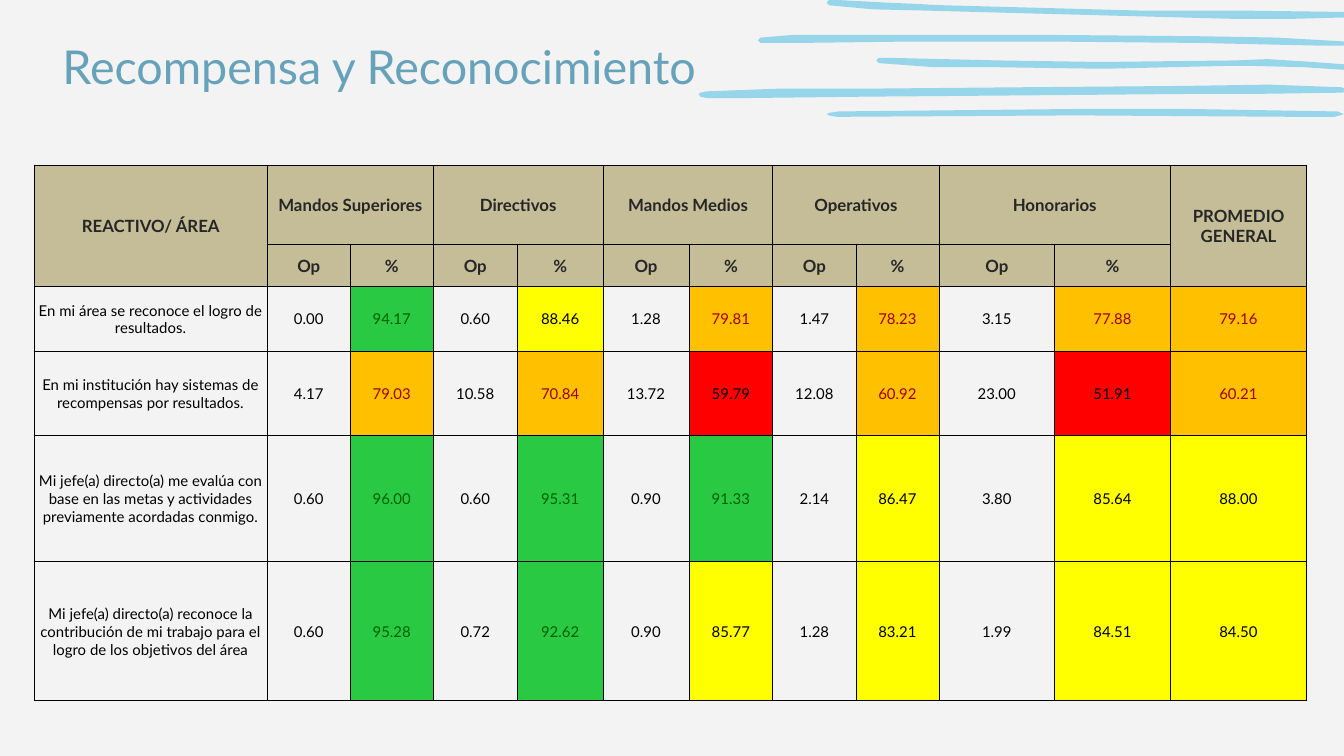
from pptx import Presentation
from pptx.dml.color import RGBColor
from pptx.enum.text import MSO_ANCHOR, MSO_AUTO_SIZE, PP_ALIGN
from pptx.oxml import parse_xml
from pptx.oxml.ns import nsdecls
from pptx.util import Pt


def tint(code):
    return RGBColor.from_string(code)


def write(frame, text, size, color, align, bold=False):
    line = frame.paragraphs[0]
    line.alignment = align
    run = line.add_run()
    run.text = text
    run.font.name = "Lato"
    run.font.size = Pt(size)
    run.font.bold = bold
    run.font.color.rgb = tint(color)


deck = Presentation()
deck.slide_width, deck.slide_height = Pt(720), Pt(405)
slide = deck.slides.add_slide(deck.slide_layouts[5])
slide.background.fill.solid()
slide.background.fill.fore_color.rgb = tint("F3F3F3")

title = slide.shapes.title
title.left, title.top, title.width, title.height = Pt(0), Pt(13), Pt(380), Pt(44.6)
frame = title.text_frame
frame.word_wrap = True
frame.auto_size = MSO_AUTO_SIZE.NONE
frame.vertical_anchor = MSO_ANCHOR.MIDDLE
frame.margin_left = frame.margin_right = frame.margin_top = frame.margin_bottom = Pt(7.2)
write(frame, "Recompensa y Reconocimiento", 25, "66A2B9", PP_ALIGN.RIGHT)

strokes = [
    [(965, 87), (993, 87), (1000, 85), (995, 83), (877, 81), (814, 81), (720, 81.5),
     (624, 83), (617, 84), (615, 85), (617, 86.5), (623, 87), (792, 86), (809, 86)],
    [(556, 73), (644, 72), (765, 71), (883, 70), (931, 70), (999, 69), (1003, 67),
     (998, 65), (944, 63), (880, 64), (761, 65), (647, 66), (580, 66.5), (526, 68),
     (521, 69), (520, 70.5), (521, 72), (526, 73)],
    [(1001, 52), (1004, 50), (1002, 48), (975, 45.5), (943, 44), (919, 45), (830, 46),
     (810, 46), (743, 45), (660, 43), (654, 43), (652, 45), (654, 47), (695, 49.5),
     (741, 50), (808, 51), (829, 51), (915, 49), (929, 49), (970, 50)],
    [(983, 34), (1002, 34), (1004, 32.5), (1002, 31), (950, 28.5), (893, 27), (784, 26),
     (626, 26), (590, 26.5), (566, 28), (564, 30), (566, 32), (593, 32), (675, 31),
     (784, 31), (893, 32)],
    [(963, 14), (1002, 13), (1004, 11), (1002, 9), (930, 8.5), (852, 8), (703, 4),
     (660, 2), (622, 0), (617, 0), (615, 2), (617, 4), (650, 7), (692, 8), (766, 10),
     (916, 14)],
]
for dots in strokes:
    pen = slide.shapes.build_freeform(*dots[0], scale=Pt(0.72))
    pen.add_line_segments(dots[1:], close=True)
    stroke = pen.convert_to_shape()
    stroke.shadow.inherit = False
    stroke.fill.solid()
    stroke.fill.fore_color.rgb = tint("97D5EA")
    stroke.line.fill.background()

areas = ["Mandos Superiores", "Directivos", "Mandos Medios", "Operativos", "Honorarios"]
heads = ["REACTIVO/ ÁREA"]
for area in areas:
    heads += [area, ""]
rows = [
    heads + ["PROMEDIO GENERAL"],
    [""] + ["Op", "%"] * len(areas) + [""],
    ["En mi área se reconoce el logro de resultados.", "0.00", "94.17", "0.60", "88.46",
     "1.28", "79.81", "1.47", "78.23", "3.15", "77.88", "79.16"],
    ["En mi institución hay sistemas de recompensas por resultados.", "4.17", "79.03",
     "10.58", "70.84", "13.72", "59.79", "12.08", "60.92", "23.00", "51.91", "60.21"],
    ["Mi jefe(a) directo(a) me evalúa con base en las metas y actividades previamente "
     "acordadas conmigo.", "0.60", "96.00", "0.60", "95.31", "0.90", "91.33", "2.14",
     "86.47", "3.80", "85.64", "88.00"],
    ["Mi jefe(a) directo(a) reconoce la contribución de mi trabajo para el logro de los "
     "objetivos del área", "0.60", "95.28", "0.72", "92.62", "0.90", "85.77", "1.28",
     "83.21", "1.99", "84.51", "84.50"],
]
widths = [125, 44.5, 44.5, 45, 46, 46, 45, 44.5, 44.5, 62, 62, 73]
heights = [42.3, 22.5, 34.8, 45, 68, 74.4]
levels = [(90, "29C944", "006100"), (80, "FFFF00", "000000"),
          (60, "FFC000", "9C0006"), (0, "FF0000", "000000")]

table = slide.shapes.add_table(len(rows), len(widths), Pt(18.2), Pt(88.5),
                               Pt(sum(widths)), Pt(sum(heights))).table
table.first_row = table.horz_banding = False
for col, width in zip(table.columns, widths):
    col.width = Pt(width)
for row, height in zip(table.rows, heights):
    row.height = Pt(height)
last = len(widths) - 1
for c in (0, last):
    table.cell(0, c).merge(table.cell(1, c))
for c in range(1, last, 2):
    table.cell(0, c).merge(table.cell(0, c + 1))

for r, row in enumerate(rows):
    for c, text in enumerate(row):
        cell = table.cell(r, c)
        cell.vertical_anchor = MSO_ANCHOR.MIDDLE
        cell.margin_left = cell.margin_right = cell.margin_top = Pt(0.7)
        cell.margin_bottom = Pt(0)
        for side in "LRTB":
            cell._tc.get_or_add_tcPr().append(parse_xml(
                f'<a:ln{side} {nsdecls("a")} w="{Pt(0.5)}"><a:solidFill>'
                f'<a:srgbClr val="000000"/></a:solidFill></a:ln{side}>'))
        size, back, color = 8, None, "000000"
        if r < 2:
            size, back, color = 9, "C4BD97", "262626"
        elif c == last or (c and c % 2 == 0):
            back, color = next(tones for low, *tones in levels if float(text) >= low)
        if back:
            cell.fill.solid()
            cell.fill.fore_color.rgb = tint(back)
        else:
            cell.fill.background()
        if text:
            write(cell.text_frame, text, size, color, PP_ALIGN.CENTER, r < 2)

deck.save("out.pptx")
